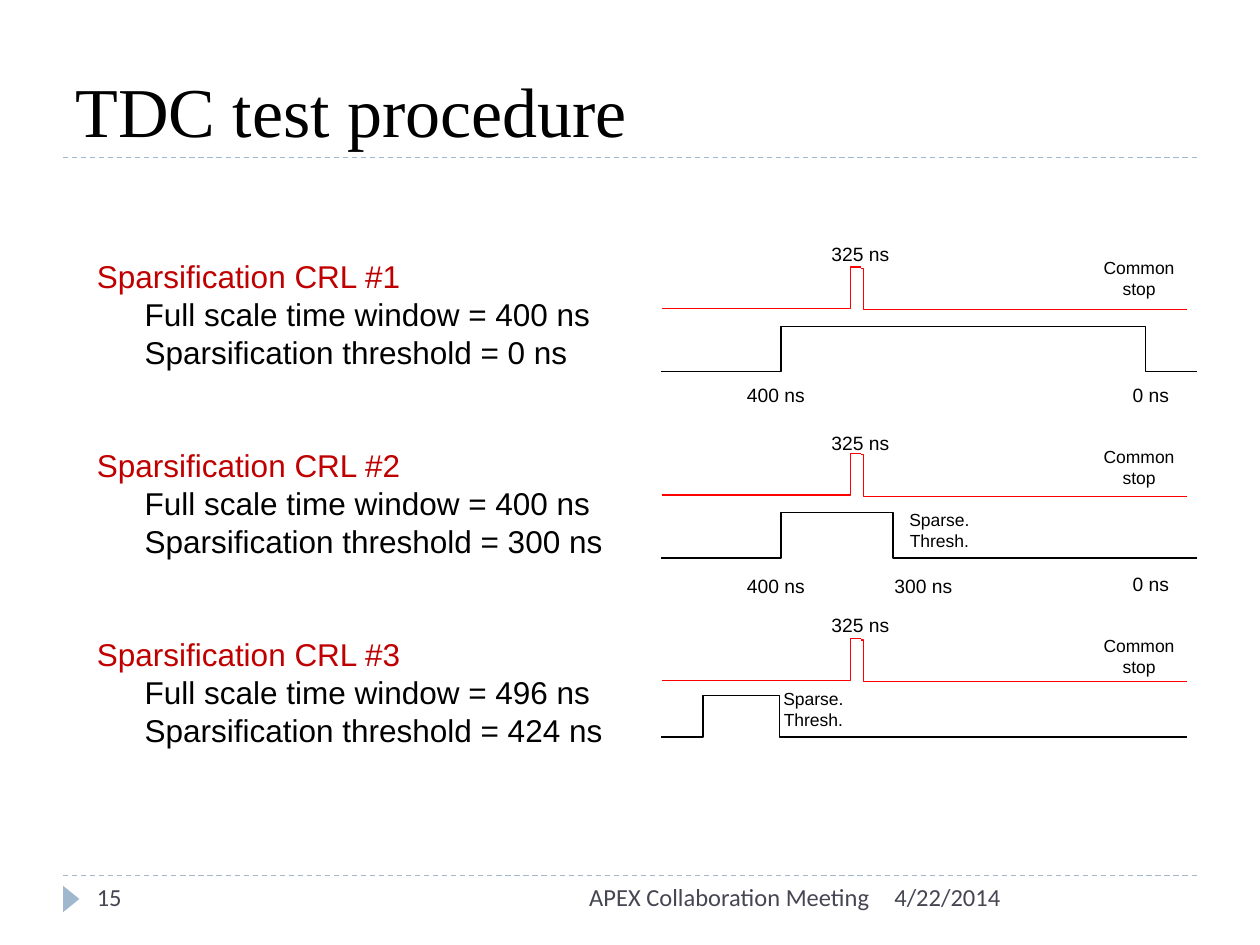
from lxml import etree
from pptx import Presentation
from pptx import util as u
from pptx.dml import color
from pptx.enum import dml, shapes, text
from pptx.oxml import ns


def rgb(value):
    return color.RGBColor.from_string(value)


class Deck:
    """Holds the slide style and draws each kind of element on the current slide."""

    BLACK, RED, PALE, GREY = "000000", "FF0000", "9FB8CD", "464653"
    HEADING = "C00000"

    def __init__(self, prs):
        self.s = prs.slides.add_slide(prs.slide_layouts[5])

    def run(self, p, words, size, col, font="Arial"):
        r = p.add_run()
        r.text = words
        r.font.size, r.font.name = u.Pt(size), font
        r.font.color.rgb = rgb(col)

    def title(self, words):
        sp = self.s.shapes.title
        sp.left, sp.top, sp.width, sp.height = map(u.Inches, (0.5, 0.17, 9, 1.08))
        tf = sp.text_frame
        tf.vertical_anchor = text.MSO_ANCHOR.BOTTOM
        p = tf.paragraphs[0]
        p.alignment = text.PP_ALIGN.LEFT
        self.run(p, words, 40, self.BLACK, "Times New Roman")

    def box(self, x, y, w, h, wrap=True):
        tf = self.s.shapes.add_textbox(*map(u.Inches, (x, y, w, h))).text_frame
        tf.word_wrap = wrap
        return tf

    def label(self, words, x, y, w, h=0.29, size=11, col=BLACK, font="Arial",
              align=text.PP_ALIGN.LEFT, wrap=False):
        p = self.box(x, y, w, h, wrap).paragraphs[0]
        p.alignment = align
        self.run(p, words, size, col, font)

    def note(self, words, x, y, w):
        self.label(words, x, y, w, 0.44, 10, align=text.PP_ALIGN.CENTER, wrap=True)

    def footer(self, words, x, w, align=text.PP_ALIGN.LEFT):
        self.label(words, x, 6.95, w, 0.4, 14, self.GREY, "Calibri", align, True)

    def settings(self, y, heading, lines):
        tf = self.box(0.67, y, 5.25, 1.01)
        self.run(tf.paragraphs[0], heading, 18, self.HEADING)
        for line in lines:
            p = tf.add_paragraph()
            p._p.get_or_add_pPr().set("marL", str(u.Inches(0.38)))
            self.run(p, line, 18, self.BLACK)

    def line(self, kind, start, end, col):
        c = self.s.shapes.add_connector(kind, *map(u.Inches, start + end))
        c.line.color.rgb = rgb(col)
        c.line.width = u.Pt(0.75)
        etree.SubElement(c._element.spPr, ns.qn("a:effectLst"))
        return c

    def rule(self, y):
        c = self.line(shapes.MSO_CONNECTOR.STRAIGHT, (0.5, y), (9.5, y), self.PALE)
        c.line.dash_style = dml.MSO_LINE.DASH

    def step(self, start, end, bend, col):
        c = self.line(shapes.MSO_CONNECTOR.ELBOW, start, end, col)
        ratio = (bend - start[0]) / (end[0] - start[0])
        av = c._element.spPr.find(ns.qn("a:prstGeom")).get_or_add_avLst()
        etree.SubElement(av, ns.qn("a:gd"), name="adj1", fmla=f"val {round(ratio * 100000)}")

    def pulse(self, top):
        self.step((5.25, top + 0.33), (6.83, top), 6.75, self.RED)
        self.step((9.42, top + 0.34), (6.83, top + 0.01), 6.85, self.RED)

    def gate(self, top, height, rise, fall, left_join, right_join, end):
        self.step((5.25, top + height), (left_join, top), rise, self.BLACK)
        self.step((end, top + height), (right_join, top), fall, self.BLACK)

    def marker(self):
        sp = self.s.shapes.add_shape(shapes.MSO_SHAPE.ISOSCELES_TRIANGLE,
                                     *map(u.Inches, (0.46, 7.07, 0.21, 0.13)))
        sp.rotation = 90
        sp.shadow.inherit = False
        sp.fill.solid()
        sp.fill.fore_color.rgb = rgb(self.PALE)
        sp.line.fill.background()


def main():
    prs = Presentation()
    prs.slide_width, prs.slide_height = u.Inches(10), u.Inches(7.5)
    d = Deck(prs)
    for y in (6.95, 1.25):
        d.rule(y)
    d.marker()
    d.title("TDC test procedure")

    tests = [
        (400, 0, 2.12, 1.87, (2.59, 0.36, 6.2, 9.09, 6.58, 6.25, 9.5)),
        (400, 300, 3.6, 3.37, (4.07, 0.36, 6.2, 7.09, 6.58, 6.25, 9.5)),
        (496, 424, 5.07, 4.82, (5.52, 0.33, 5.58, 6.19, 5.92, 5.92, 9.42)),
    ]
    for i, (window, threshold, pulse_top, label_top, gate) in enumerate(tests):
        y = 1.99 + 1.5 * i
        d.settings(y, f"Sparsification CRL #{i + 1}",
                   [f"Full scale time window = {window} ns",
                    f"Sparsification threshold = {threshold} ns"])
        d.pulse(pulse_top)
        d.gate(*gate)
        d.label("325 ns", 6.5, label_top, 0.67)
        d.note("Common stop", 8.58, y, 0.92)

    for words, x, y, w in [("400 ns", 5.83, 2.99, 0.67), ("0 ns", 8.89, 2.99, 0.5),
                           ("400 ns", 5.83, 4.51, 0.67), ("300 ns", 7, 4.51, 0.67),
                           ("0 ns", 8.89, 4.49, 0.5)]:
        d.label(words, x, y, w)
    for x, y in [(7.08, 3.99), (6.08, 5.41)]:
        d.note("Sparse. Thresh.", x, y, 0.75)

    d.footer("15", 0.67, 2.17)
    d.footer("APEX Collaboration Meeting", 3.17, 3.83, text.PP_ALIGN.RIGHT)
    d.footer("4/22/2014", 7, 2.5)
    prs.save("out.pptx")


if __name__ == "__main__":
    main()
